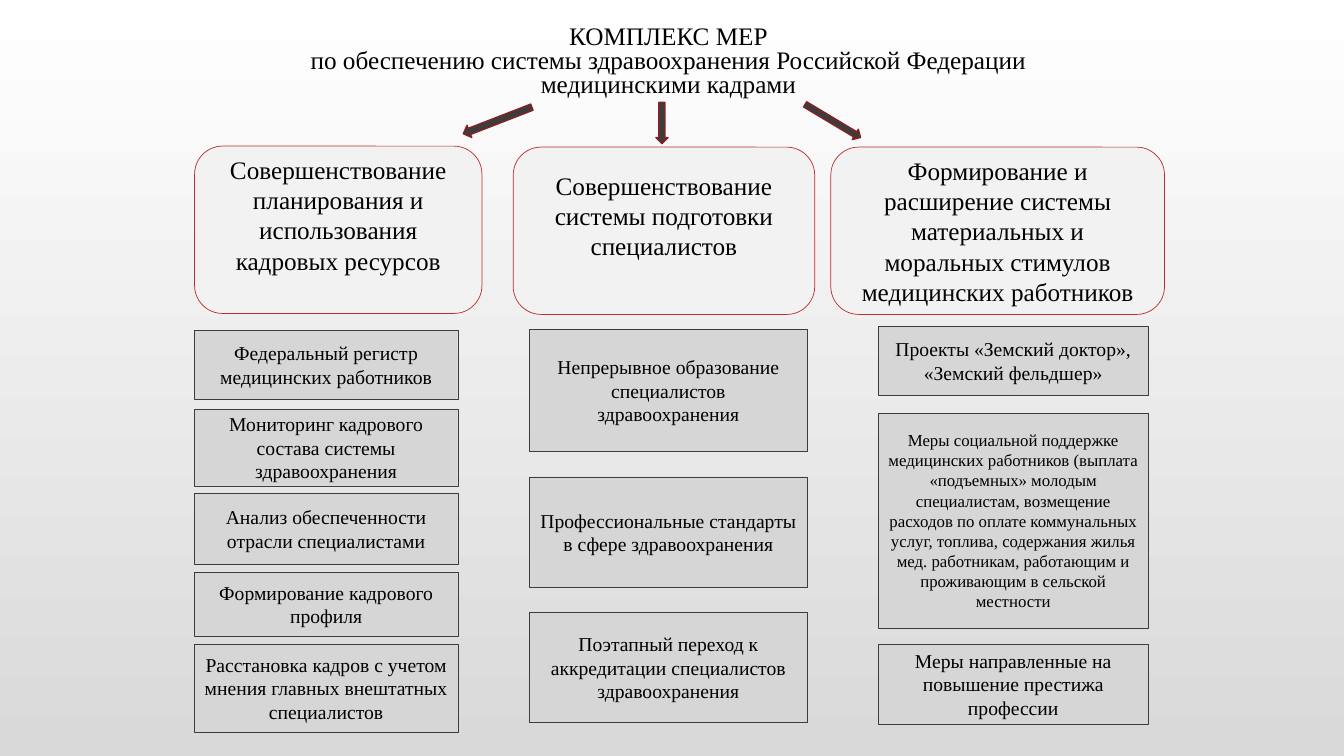
from pptx import Presentation
from pptx.dml.color import RGBColor
from pptx.enum.shapes import MSO_SHAPE
from pptx.enum.text import MSO_ANCHOR, MSO_AUTO_SIZE, PP_ALIGN
from pptx.util import Inches, Pt

FONT = "Times New Roman"
COLORS = {
    "text": "000000", "box": "D6D6D6", "edge": "3C3C3C",
    "card": "F2F2F2", "rim": "B82D2F", "arrow": "3C3C3C",
    "trim": "882123", "low": "D9D9D9", "high": "FFFFFF",
}


def style(para, size):
    para.alignment = PP_ALIGN.CENTER
    para.font.name = FONT
    para.font.size = Pt(size)
    para.font.color.rgb = RGBColor.from_string(COLORS["text"])


def draw(kind, place, fill, line, width):
    shape = slide.shapes.add_shape(kind, *map(Inches, place))
    shape.shadow.inherit = False
    shape.fill.solid()
    shape.fill.fore_color.rgb = RGBColor.from_string(COLORS[fill])
    shape.line.color.rgb = RGBColor.from_string(COLORS[line])
    shape.line.width = Pt(width)
    return shape


prs = Presentation()
prs.slide_width = Inches(13.33)
prs.slide_height = Inches(7.5)
slide = prs.slides.add_slide(prs.slide_layouts[5])

back = slide.background.fill
back.gradient()
back.gradient_angle = 90
for stop, name in zip(back.gradient_stops, ("low", "high")):
    stop.color.rgb = RGBColor.from_string(COLORS[name])

title = slide.shapes.title
title.left, title.top = Inches(2.1), Inches(0.21)
title.width, title.height = Inches(9.06), Inches(0.83)
frame = title.text_frame
frame.word_wrap = True
frame.auto_size = MSO_AUTO_SIZE.NONE
frame.vertical_anchor = MSO_ANCHOR.TOP
frame.text = (
    "КОМПЛЕКС МЕР\n"
    "по обеспечению системы здравоохранения Российской Федерации\n"
    "медицинскими кадрами"
)
for para in frame.paragraphs:
    style(para, 18)
    para.line_spacing = 0.8

columns = [
    (1.93, 2.61, [
        (3.28, 0.68, 14, "Федеральный регистр медицинских работников"),
        (4.06, 0.76, 14, "Мониторинг кадрового состава системы здравоохранения"),
        (4.89, 0.71, 14, "Анализ обеспеченности отрасли специалистами"),
        (5.68, 0.63, 14, "Формирование кадрового профиля"),
        (6.39, 0.87, 14, "Расстановка кадров с учетом мнения главных внештатных специалистов"),
    ]),
    (5.25, 2.76, [
        (3.27, 1.21, 14, "Непрерывное образование специалистов здравоохранения"),
        (4.73, 1.1, 14, "Профессиональные стандарты в сфере здравоохранения"),
        (6.07, 1.1, 14, "Поэтапный переход к аккредитации специалистов здравоохранения"),
    ]),
    (8.71, 2.68, [
        (3.24, 0.68, 14, "Проекты «Земский доктор», «Земский фельдшер»"),
        (4.1, 2.13, 12,
         "Меры социальной поддержке медицинских работников (выплата «подъемных» "
         "молодым специалистам, возмещение расходов по оплате коммунальных услуг, "
         "топлива, содержания жилья мед. работникам, работающим и проживающим "
         "в сельской местности"),
        (6.39, 0.79, 14, "Меры направленные на повышение престижа профессии"),
    ]),
]
for left, width, boxes in columns:
    for top, height, size, text in boxes:
        box = draw(MSO_SHAPE.RECTANGLE, (left, top, width, height), "box", "edge", 0.25)
        box.text_frame.word_wrap = True
        box.text_frame.text = text
        style(box.text_frame.paragraphs[0], size)

cards = [
    (1.93, 1.45, 2.85, 0.3, "Совершенствование планирования и использования кадровых ресурсов"),
    (5.09, 1.46, 2.99, 0.3, "Совершенствование системы подготовки специалистов"),
    (8.24, 1.46, 3.31, 0,
     "Формирование и расширение системы материальных и моральных стимулов "
     "медицинских работников"),
]
for left, top, width, inset, text in cards:
    card = draw(MSO_SHAPE.ROUNDED_RECTANGLE, (left, top, width, 1.66), "card", "rim", 0.5)
    frame = card.text_frame
    frame.word_wrap = True
    frame.margin_top = 0
    frame.margin_bottom = Inches(inset)
    frame.text = text
    style(frame.paragraphs[0], 18)

arrows = [
    (4.57, 1.13, 0.73, 0.13, 158.8),
    (6.36, 1.16, 0.41, 0.12, 90),
    (7.94, 1.14, 0.64, 0.12, 30.9),
]
for *place, angle in arrows:
    arrow = draw(MSO_SHAPE.RIGHT_ARROW, place, "arrow", "trim", 1)
    arrow.rotation = angle

prs.save("out.pptx")
